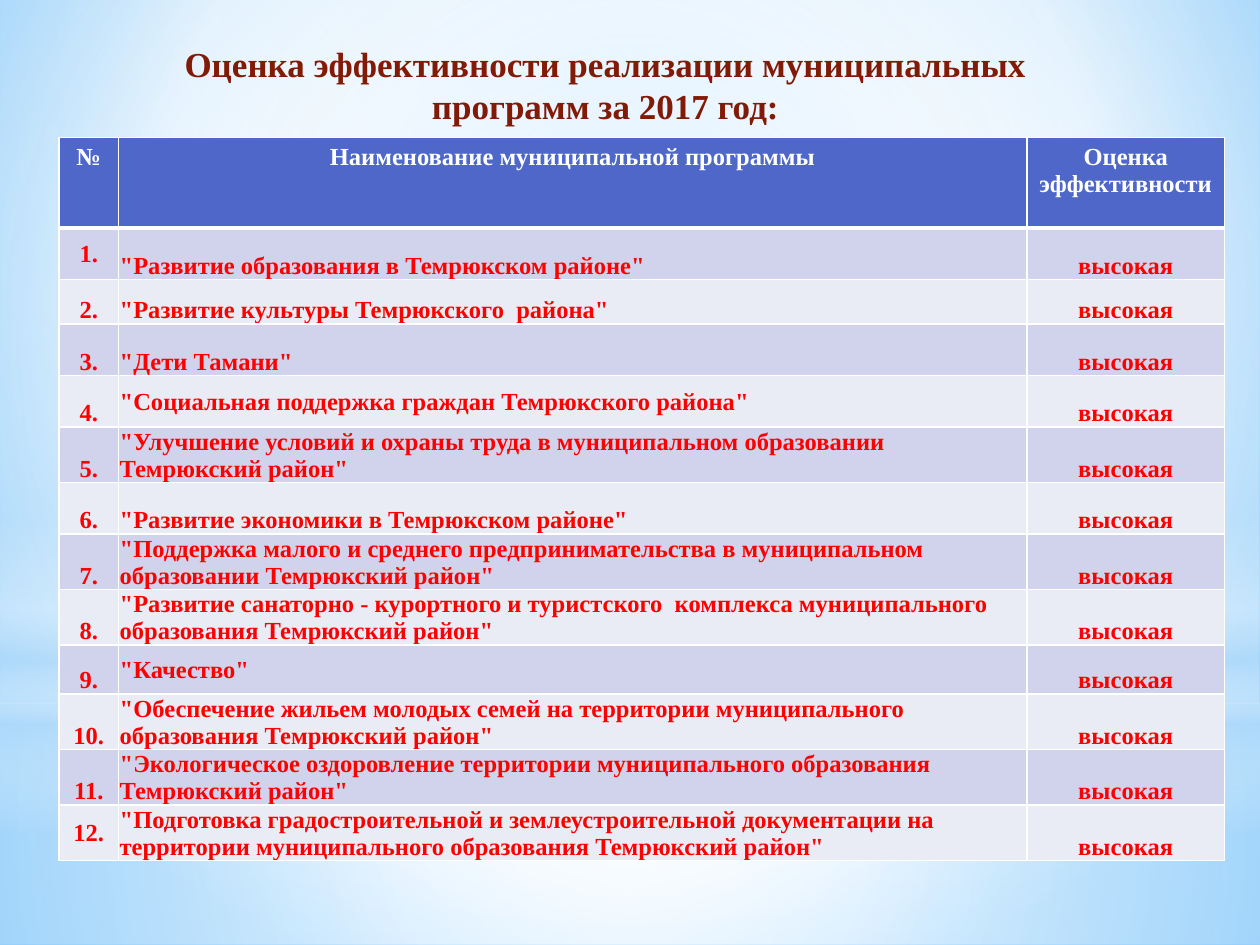
from lxml.etree import SubElement
from pptx import Presentation
from pptx.dml.color import RGBColor
from pptx.enum.shapes import MSO_SHAPE
from pptx.enum.text import MSO_ANCHOR, MSO_AUTO_SIZE, PP_ALIGN
from pptx.oxml import parse_xml
from pptx.oxml.ns import nsdecls, qn
from pptx.util import Inches, Pt

FONT = "Times New Roman"
WHITE = RGBColor(0xFF, 0xFF, 0xFF)
SKY = RGBColor(0xB4, 0xDC, 0xFA)
PALE_BLUE = RGBColor(0x9E, 0xD5, 0xFF)
BRIGHT_BLUE = RGBColor(0x5B, 0xB9, 0xFF)
HEADER_BLUE = RGBColor(0x4E, 0x67, 0xC8)
DARK_BAND = RGBColor(0xD0, 0xD3, 0xEB)
LIGHT_BAND = RGBColor(0xE9, 0xEB, 0xF5)
RED = RGBColor(0xFF, 0x00, 0x00)
BROWN = RGBColor(0x82, 0x1A, 0x08)

LEFT, CENTER, JUSTIFY = PP_ALIGN.LEFT, PP_ALIGN.CENTER, PP_ALIGN.JUSTIFY
TOP, MIDDLE, BOTTOM = MSO_ANCHOR.TOP, MSO_ANCHOR.MIDDLE, MSO_ANCHOR.BOTTOM

COLUMN_WIDTHS = [0.47, 7.21, 1.57]
HEADER_HEIGHT = 0.72
ROW_HEIGHT = 0.41
SPECIAL_HEIGHTS = {2: 0.35, 9: 0.39}
HEADERS = ["№", "Наименование муниципальной программы", "Оценка эффективности"]
RATING = "высокая"
MIDDLE_NUMBERS = {1, 12}
PROGRAMS = [
    ('"Развитие образования в Темрюкском районе"', LEFT, BOTTOM),
    ('"Развитие культуры Темрюкского  района"', LEFT, BOTTOM),
    ('"Дети Тамани"', JUSTIFY, BOTTOM),
    ('"Социальная поддержка граждан Темрюкского района"', LEFT, MIDDLE),
    ('"Улучшение условий и охраны труда в муниципальном образовании Темрюкский район"', LEFT, BOTTOM),
    ('"Развитие экономики в Темрюкском районе"', LEFT, BOTTOM),
    ('"Поддержка малого и среднего предпринимательства в муниципальном образовании Темрюкский район"', LEFT, MIDDLE),
    ('"Развитие санаторно - курортного и туристского  комплекса муниципального образования Темрюкский район"',
     LEFT, MIDDLE),
    ('"Качество"', LEFT, MIDDLE),
    ('"Обеспечение жильем молодых семей на территории муниципального образования Темрюкский район"', LEFT, MIDDLE),
    ('"Экологическое оздоровление территории муниципального образования Темрюкский район"', LEFT, MIDDLE),
    ('"Подготовка градостроительной и землеустроительной документации на территории муниципального '
     'образования Темрюкский район"', LEFT, BOTTOM),
]


def gradient_fill(stops, focus=None):
    gradient = parse_xml(f'<a:gradFill {nsdecls("a")} rotWithShape="1"><a:gsLst/></a:gradFill>')
    for position, color, opacity in stops:
        stop = SubElement(gradient[0], qn("a:gs"), pos=str(position * 1000))
        color_element = SubElement(stop, qn("a:srgbClr"), val=str(color))
        if opacity < 100:
            SubElement(color_element, qn("a:alpha"), val=str(opacity * 1000))
    if focus:
        circle = SubElement(gradient, qn("a:path"), path="circle")
        edges = {side: str(value * 1000) for side, value in zip("ltrb", focus)}
        SubElement(circle, qn("a:fillToRect"), **edges)
    else:
        SubElement(gradient, qn("a:lin"), ang="5400000", scaled="0")
    return gradient


def set_background(slide, gradient):
    slide.background.fill.solid()
    properties = slide.background._cSld.bg.bgPr
    properties.replace(properties.find(qn("a:solidFill")), gradient)


def add_glow(slide, kind, top, height, stops, focus=None):
    shape = slide.shapes.add_shape(kind, 0, Inches(top), Inches(10), Inches(height))
    shape.shadow.inherit = False
    shape.line.fill.background()
    shape.fill.background()
    properties = shape._element.spPr
    properties.replace(properties.find(qn("a:noFill")), gradient_fill(stops, focus))


def write_text(text_frame, text, size=14, color=RED, align=CENTER):
    paragraph = text_frame.paragraphs[0]
    paragraph.alignment = align
    run = paragraph.add_run()
    run.text = text
    run.font.name = FONT
    run.font.size = Pt(size)
    run.font.bold = True
    run.font.color.rgb = color


def set_borders(cell, top=1, bottom=1):
    properties = cell._tc.get_or_add_tcPr()
    widths = {"lnL": 1, "lnR": 1, "lnT": top, "lnB": bottom}
    for index, (side, width) in enumerate(widths.items()):
        border = parse_xml(
            f'<a:{side} {nsdecls("a")} w="{Pt(width)}"><a:solidFill>'
            f'<a:srgbClr val="{WHITE}"/></a:solidFill></a:{side}>')
        properties.insert(index, border)


def fill_cell(cell, text, fill, anchor=BOTTOM, top=1, bottom=1, tight=True, **text_format):
    cell.fill.solid()
    cell.fill.fore_color.rgb = fill
    cell.vertical_anchor = anchor
    if tight:
        cell.margin_left = cell.margin_right = cell.margin_top = Inches(0.01)
        cell.margin_bottom = 0
    set_borders(cell, top, bottom)
    write_text(cell.text_frame, text, **text_format)


def add_program_table(slide):
    heights = [HEADER_HEIGHT] + [
        SPECIAL_HEIGHTS.get(number, ROW_HEIGHT) for number in range(1, len(PROGRAMS) + 1)]
    frame = slide.shapes.add_table(
        len(heights), len(COLUMN_WIDTHS), Inches(0.47), Inches(1.09),
        Inches(sum(COLUMN_WIDTHS)), Inches(sum(heights)))
    table = frame.table
    for column, width in zip(table.columns, COLUMN_WIDTHS):
        column.width = Inches(width)
    for row, height in zip(table.rows, heights):
        row.height = Inches(height)
    for column, header in enumerate(HEADERS):
        fill_cell(table.cell(0, column), header, HEADER_BLUE, anchor=TOP, bottom=3,
                  tight=False, color=WHITE)
    for number, (program, align, anchor) in enumerate(PROGRAMS, 1):
        fill = DARK_BAND if number % 2 else LIGHT_BAND
        top = 3 if number == 1 else 1
        number_anchor = MIDDLE if number in MIDDLE_NUMBERS else BOTTOM
        fill_cell(table.cell(number, 0), f"{number}.", fill, number_anchor, top)
        fill_cell(table.cell(number, 1), program, fill, anchor, top, align=align)
        fill_cell(table.cell(number, 2), RATING, fill, top=top)


def add_title(slide, text):
    box = slide.shapes.add_textbox(Inches(0.86), Inches(0.29), Inches(7.89), Inches(0.77))
    box.text_frame.word_wrap = True
    box.text_frame.auto_size = MSO_AUTO_SIZE.SHAPE_TO_FIT_TEXT
    write_text(box.text_frame, text, size=20, color=BROWN)


def main():
    presentation = Presentation()
    presentation.slide_width = Inches(10)
    presentation.slide_height = Inches(7.5)
    slide = presentation.slides.add_slide(presentation.slide_layouts[6])
    center = (50, 50, 50, 50)
    set_background(slide, gradient_fill(
        [(0, PALE_BLUE, 100), (60, WHITE, 100), (100, BRIGHT_BLUE, 100)], (20, 10, 20, 60)))
    add_glow(slide, MSO_SHAPE.RECTANGLE, 5.58, 1.92,
             [(0, WHITE, 91), (37, WHITE, 76), (100, SKY, 79)], center)
    add_glow(slide, MSO_SHAPE.RECTANGLE, 0, 5.58,
             [(0, WHITE, 89), (48, WHITE, 62), (100, SKY, 79)], center)
    add_glow(slide, MSO_SHAPE.RECTANGLE, 4.12, 2.5,
             [(0, WHITE, 0), (29, WHITE, 30), (45, SKY, 40),
              (55, WHITE, 26), (65, SKY, 60), (100, WHITE, 0)])
    add_glow(slide, MSO_SHAPE.OVAL, 1.75, 5.58, [(0, WHITE, 100), (56, WHITE, 0)], center)
    add_program_table(slide)
    add_title(slide, "Оценка эффективности реализации муниципальных программ за 2017 год:")
    presentation.save("out.pptx")


if __name__ == "__main__":
    main()
